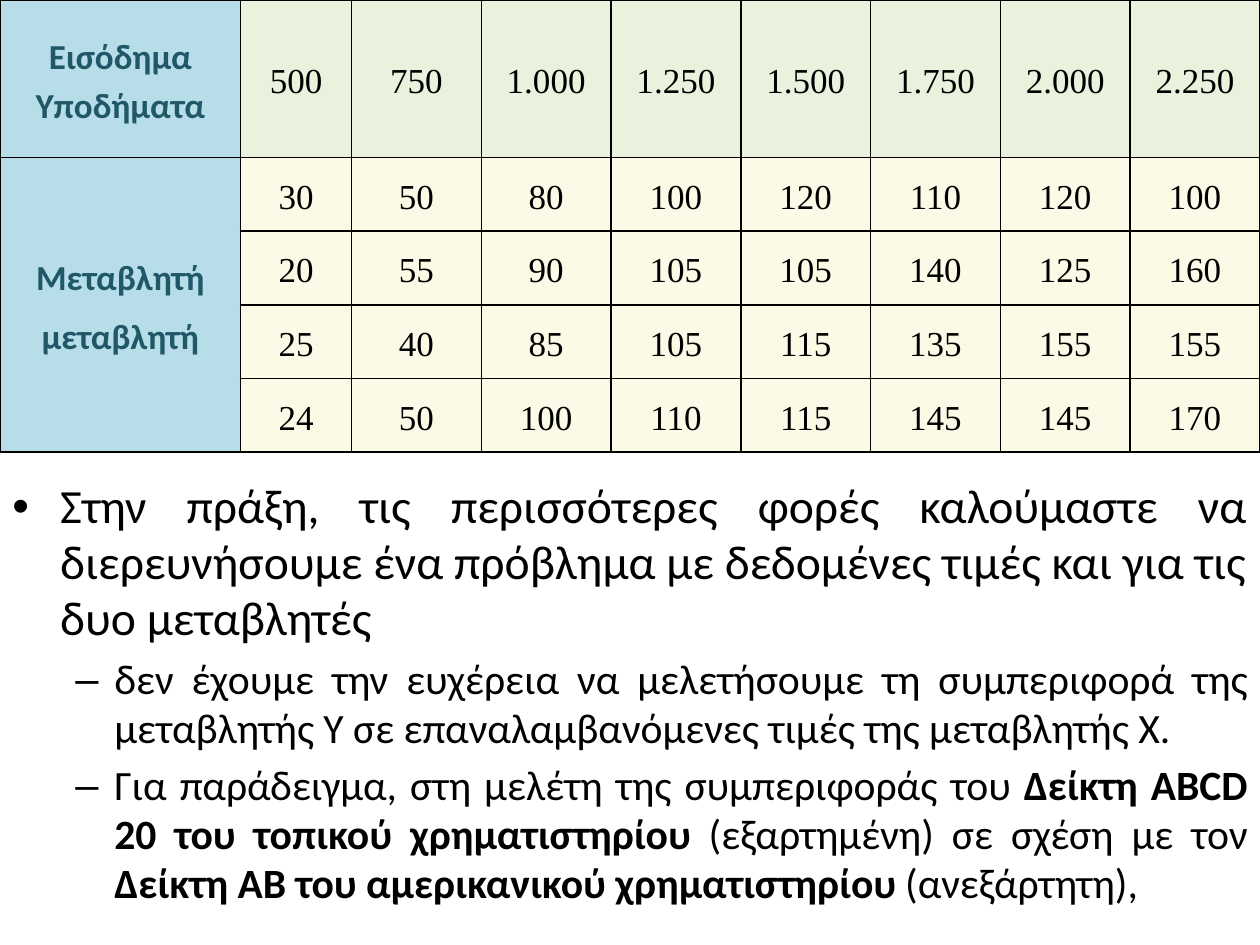
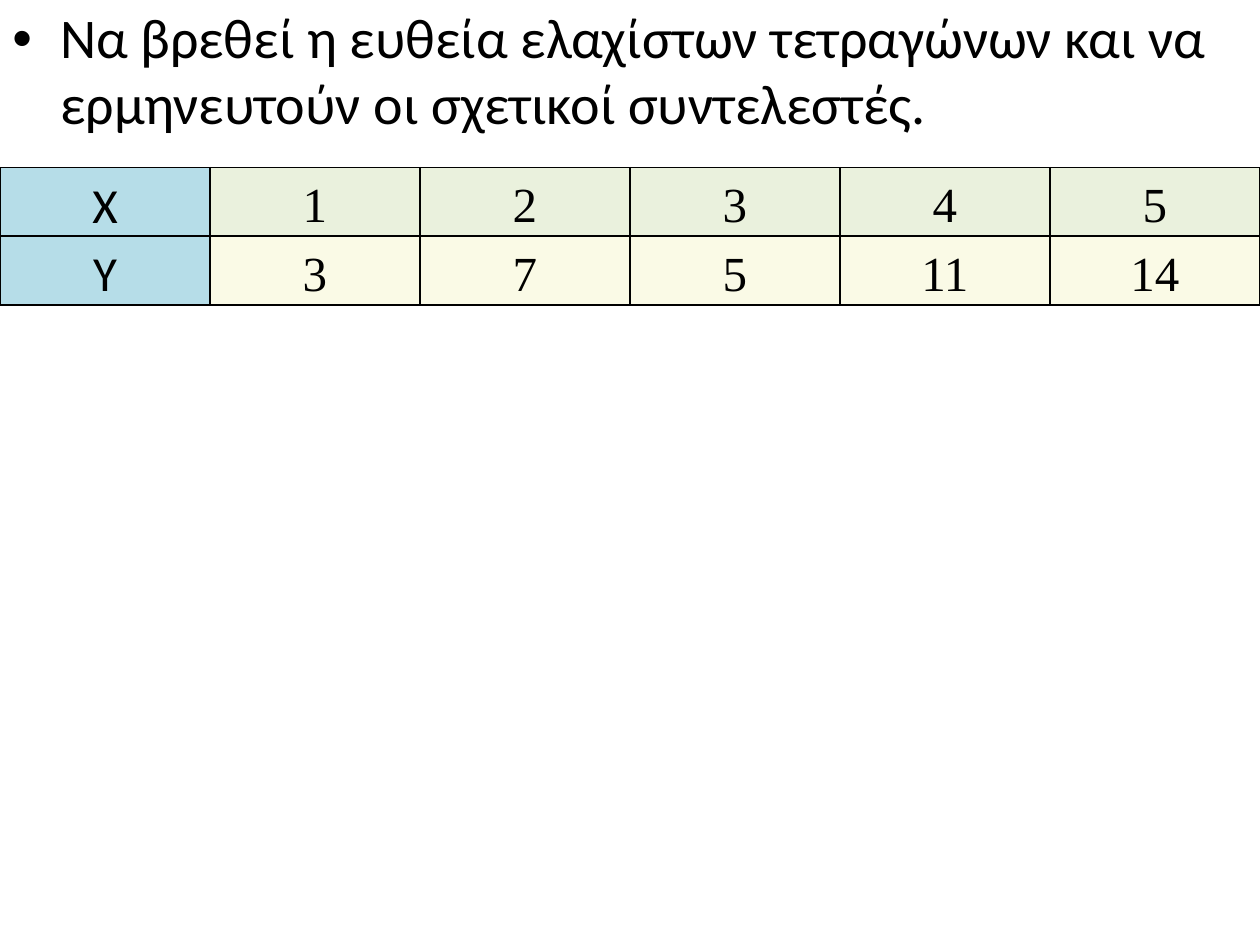
import pptx
import pptx.dml.color
import pptx.enum.text
import pptx.oxml
import pptx.oxml.ns
import pptx.util
from lxml import etree

Inches = pptx.util.Inches
Pt = pptx.util.Pt
ALIGN = pptx.enum.text.PP_ALIGN
MIDDLE = pptx.enum.text.MSO_ANCHOR.MIDDLE

COLOURS = {
    "text": "000000",
    "border": "000000",
    "label": "215868",
    "label_fill": "B6DDE8",
    "header_fill": "EAF1DD",
    "value_fill": "FAFAE6",
}
BODY_FONT = "Calibri"
NUMBER_FONT = "Times New Roman"
# Bullet sign, left margin and hanging indent for each outline level
BULLETS = [("•", 0.38, 0.38), ("–", 0.81, 0.31)]


def rgb(name):
    return pptx.dml.color.RGBColor.from_string(COLOURS[name])


def add_child(parent, tag, **attributes):
    return etree.SubElement(parent, pptx.oxml.ns.qn(tag), attributes)


def write_text(para, text, size, font=BODY_FONT, colour="text", bold=False,
               align=ALIGN.LEFT, spacing=1.0, before=0, after=0):
    """Fill a paragraph; parts between ** marks swap the bold setting."""
    para.alignment = align
    para.line_spacing = spacing
    para.space_before = Pt(before)
    para.space_after = Pt(after)
    for index, part in enumerate(text.split("**")):
        if not part:
            continue
        span = para.add_run()
        span.text = part
        span.font.size = Pt(size)
        span.font.name = font
        span.font.bold = bold != (index % 2 == 1)
        span.font.color.rgb = rgb(colour)


class Deck:
    def __init__(self):
        self.file = pptx.Presentation()
        self.file.slide_width = Inches(10)
        self.file.slide_height = Inches(7.5)
        self.page = None

    def add_page(self):
        self.page = self.file.slides.add_slide(self.file.slide_layouts[6])

    def bullets(self, top, height, items, align=ALIGN.LEFT):
        """Add a full-width outline from (level, size, text) items."""
        box = self.page.shapes.add_textbox(0, Inches(top), Inches(10), Inches(height))
        frame = box.text_frame
        frame.word_wrap = True
        for index, (level, size, text) in enumerate(items):
            para = frame.add_paragraph() if index else frame.paragraphs[0]
            write_text(para, text, size, align=align, spacing=0.98, before=size * 0.2)
            para.level = level
            sign, margin, hanging = BULLETS[level]
            properties = para._p.get_or_add_pPr()
            properties.set("marL", str(Inches(margin)))
            properties.set("indent", str(-Inches(hanging)))
            add_child(properties, "a:buFont", typeface="Arial")
            add_child(properties, "a:buChar", char=sign)

    def table(self, top, widths, heights, rows, size, label_colour="text", label_bold=False):
        """Add a grid with labels in column one and a header in row one."""
        frame = self.page.shapes.add_table(
            len(rows), len(widths), 0, Inches(top),
            Inches(sum(widths)), Inches(sum(heights)))
        table = frame.table
        table.first_row = table.horz_banding = False
        for column, width in zip(table.columns, widths):
            column.width = Inches(width)
        for line, height in zip(table.rows, heights):
            line.height = Inches(height)
        for row, texts in enumerate(rows):
            for column, text in enumerate(texts):
                cell = table.cell(row, column)
                if column == 0:
                    fill = "label_fill"
                    style = {"colour": label_colour, "bold": label_bold}
                else:
                    fill = "value_fill" if row else "header_fill"
                    style = {"font": NUMBER_FONT}
                self.cell(cell, text, fill, size, style)
        return table

    def cell(self, cell, text, fill, size, style):
        cell.vertical_anchor = MIDDLE
        cell.margin_left = cell.margin_right = Inches(0.07)
        cell.margin_top = cell.margin_bottom = 0
        properties = cell._tc.get_or_add_tcPr()
        for side in "LRTB":
            border = add_child(properties, f"a:ln{side}", w=str(Pt(1)))
            solid = add_child(border, "a:solidFill")
            add_child(solid, "a:srgbClr", val=COLOURS["border"])
        cell.fill.solid()
        cell.fill.fore_color.rgb = rgb(fill)
        frame = cell.text_frame
        for index, line in enumerate(text.splitlines()):
            para = frame.add_paragraph() if index else frame.paragraphs[0]
            write_text(para, line, size, align=ALIGN.CENTER, spacing=1.15,
                       before=3, after=3, **style)


def income_page(deck):
    deck.add_page()
    deck.bullets(3.75, 3.75, [
        (0, 27.2, "Στην πράξη, τις περισσότερες φορές καλούμαστε να διερευνήσουμε "
                  "ένα πρόβλημα με δεδομένες τιμές και για τις δυο μεταβλητές"),
        (1, 23.8, "δεν έχουμε την ευχέρεια να μελετήσουμε τη συμπεριφορά της "
                  "μεταβλητής Υ σε επαναλαμβανόμενες τιμές της μεταβλητής Χ."),
        (1, 23.8, "Για παράδειγμα, στη μελέτη της συμπεριφοράς του "
                  "**Δείκτη ABCD 20 του τοπικού χρηματιστηρίου** (εξαρτημένη) "
                  "σε σχέση με τον **Δείκτη AB του αμερικανικού χρηματιστηρίου** "
                  "(ανεξάρτητη),"),
    ], align=ALIGN.JUSTIFY)
    rows = [
        ["Εισόδημα Υποδήματα", "500", "750", "1.000", "1.250", "1.500", "1.750", "2.000", "2.250"],
        ["Μεταβλητή\nμεταβλητή", "30", "50", "80", "100", "120", "110", "120", "100"],
        ["", "20", "55", "90", "105", "105", "140", "125", "160"],
        ["", "25", "40", "85", "105", "115", "135", "155", "155"],
        ["", "24", "50", "100", "110", "115", "145", "145", "170"],
    ]
    table = deck.table(0, [1.91, 0.88] + [1.03] * 7, [1.25] + [2.34 / 4] * 4, rows, 20,
                       label_colour="label", label_bold=True)
    table.cell(1, 0).merge(table.cell(4, 0))


def least_squares_page(deck):
    deck.add_page()
    deck.bullets(0, 1.48, [
        (0, 32, "Να βρεθεί η ευθεία ελαχίστων τετραγώνων και να ερμηνευτούν "
                "οι σχετικοί συντελεστές."),
    ])
    rows = [["Χ", "1", "2", "3", "4", "5"],
            ["Υ", "3", "7", "5", "11", "14"]]
    deck.table(1.33, [10 / 6] * 6, [1.09 / 2] * 2, rows, 28)


def main():
    deck = Deck()
    income_page(deck)
    least_squares_page(deck)
    deck.file.save("out.pptx")


if __name__ == "__main__":
    main()
